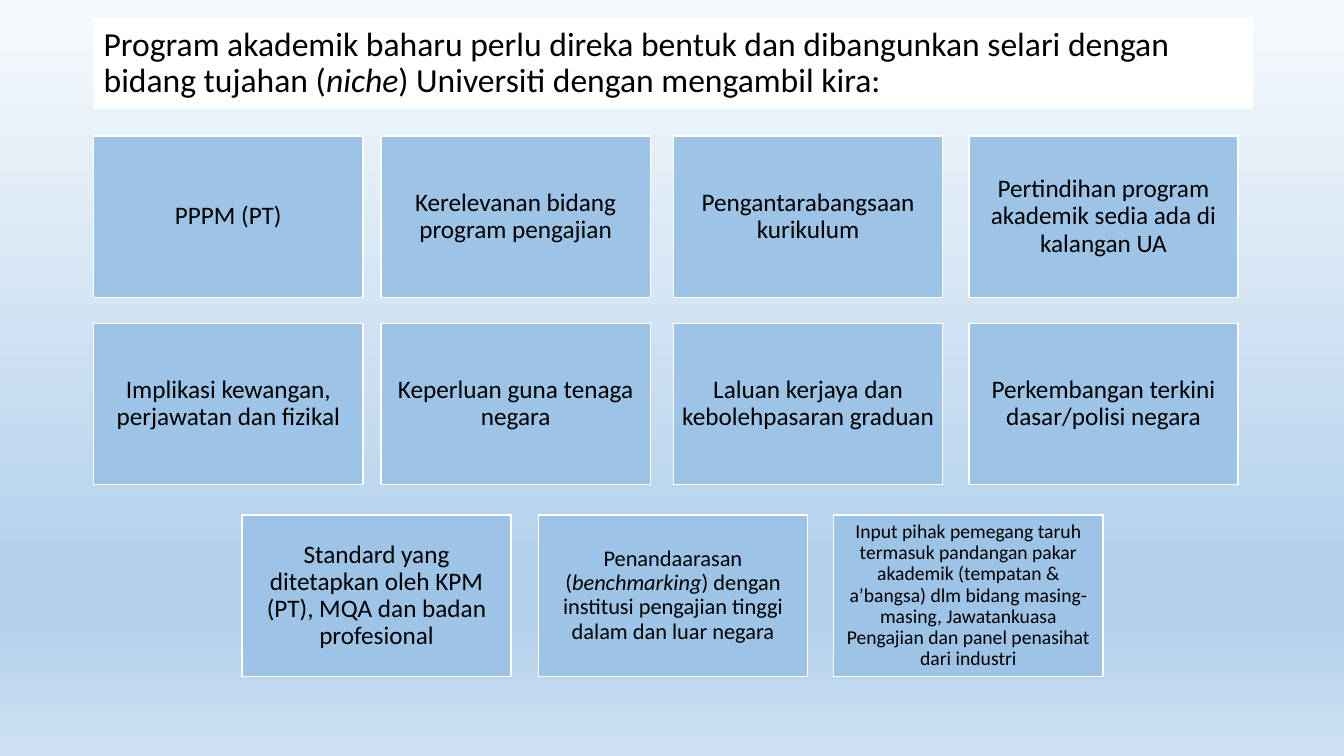
from dataclasses import dataclass

from lxml import etree
from pptx import Presentation
from pptx.dml.color import RGBColor
from pptx.enum.shapes import MSO_SHAPE
from pptx.enum.text import MSO_ANCHOR, PP_ALIGN
from pptx.oxml.ns import qn
from pptx.slide import Slide
from pptx.util import Inches, Pt

RECTANGLE = MSO_SHAPE.RECTANGLE
MIDDLE = MSO_ANCHOR.MIDDLE
LEFT, CENTER = PP_ALIGN.LEFT, PP_ALIGN.CENTER

FONT = "Calibri"
BLACK, WHITE, BOX_BLUE = "000000", "FFFFFF", "9DC3E6"
BACKGROUND_STOPS = [(0, "F7FAFD"), (74, "B5D2EC"), (83, "B5D2EC"), (100, "CEE1F2")]
BOX_WIDTH, BOX_HEIGHT = 2.67, 1.6


@dataclass
class Panel:
    """A filled rectangle with text; *asterisks* mark italics."""
    text: str
    left: float
    top: float
    width: float = BOX_WIDTH
    height: float = BOX_HEIGHT
    size: int = 18
    fill: str = BOX_BLUE
    line: str | None = WHITE
    align: PP_ALIGN = CENTER
    inset_x: float = 0.07
    inset_y: float = 0.07


@dataclass
class Row:
    top: float
    lefts: list[float]
    texts: list[str]
    sizes: list[int]


TITLE = Panel(
    "Program akademik baharu perlu direka bentuk dan dibangunkan selari dengan "
    "bidang tujahan (*niche*) Universiti dengan mengambil kira:",
    0.93, 0.18, 11.5, 0.9, size=24, fill=WHITE, line=None, align=LEFT,
    inset_x=0.1, inset_y=0.05,
)

COLUMNS = [0.93, 3.78, 6.68, 9.61]
ROWS = [
    Row(1.35, COLUMNS, [
        "PPPM (PT)",
        "Kerelevanan bidang program pengajian",
        "Pengantarabangsaan kurikulum",
        "Pertindihan program akademik sedia ada di kalangan UA",
    ], [18] * 4),
    Row(3.21, COLUMNS, [
        "Implikasi kewangan, perjawatan dan fizikal",
        "Keperluan guna tenaga negara",
        "Laluan kerjaya dan kebolehpasaran graduan",
        "Perkembangan terkini dasar/polisi negara",
    ], [18] * 4),
    Row(5.11, [2.4, 5.34, 8.27], [
        "Standard yang ditetapkan oleh KPM (PT), MQA dan badan profesional",
        "Penandaarasan (*benchmarking*) dengan institusi pengajian tinggi "
        "dalam dan luar negara",
        "Input pihak pemegang taruh termasuk pandangan pakar akademik "
        "(tempatan & a’bangsa) dlm bidang masing-masing, Jawatankuasa "
        "Pengajian dan panel penasihat dari industri",
    ], [18, 16, 14]),
]


def color(value: str) -> RGBColor:
    return RGBColor.from_string(value)


def paint_background(slide: Slide) -> None:
    fill = slide.background.fill
    fill.gradient()
    fill.gradient_angle = 270
    stops = slide.element.find(".//" + qn("a:gsLst"))
    for stop in list(stops):
        stops.remove(stop)
    for position, value in BACKGROUND_STOPS:
        stop = etree.SubElement(stops, qn("a:gs"), pos=str(position * 1000))
        etree.SubElement(stop, qn("a:srgbClr"), val=value)


def draw_panel(slide: Slide, panel: Panel) -> None:
    shape = slide.shapes.add_shape(
        RECTANGLE, Inches(panel.left), Inches(panel.top),
        Inches(panel.width), Inches(panel.height),
    )
    shape.shadow.inherit = False
    shape.fill.solid()
    shape.fill.fore_color.rgb = color(panel.fill)
    if panel.line:
        shape.line.color.rgb = color(panel.line)
        shape.line.width = Pt(1)
    else:
        shape.line.fill.background()

    text_frame = shape.text_frame
    text_frame.word_wrap = True
    text_frame.vertical_anchor = MIDDLE
    text_frame.margin_left = text_frame.margin_right = Inches(panel.inset_x)
    text_frame.margin_top = text_frame.margin_bottom = Inches(panel.inset_y)

    paragraph = text_frame.paragraphs[0]
    paragraph.alignment = panel.align
    paragraph.line_spacing = 0.9
    for index, part in enumerate(panel.text.split("*")):
        run = paragraph.add_run()
        run.text = part
        run.font.name = FONT
        run.font.size = Pt(panel.size)
        run.font.italic = index % 2 == 1
        run.font.color.rgb = color(BLACK)


def main() -> None:
    presentation = Presentation()
    presentation.slide_width = Inches(13.33)
    presentation.slide_height = Inches(7.5)
    slide = presentation.slides.add_slide(presentation.slide_layouts[6])
    paint_background(slide)

    # Considerations
    for row in ROWS:
        for left, text, size in zip(row.lefts, row.texts, row.sizes):
            draw_panel(slide, Panel(text, left, row.top, size=size))

    # Heading
    draw_panel(slide, TITLE)

    presentation.save("out.pptx")


if __name__ == "__main__":
    main()
